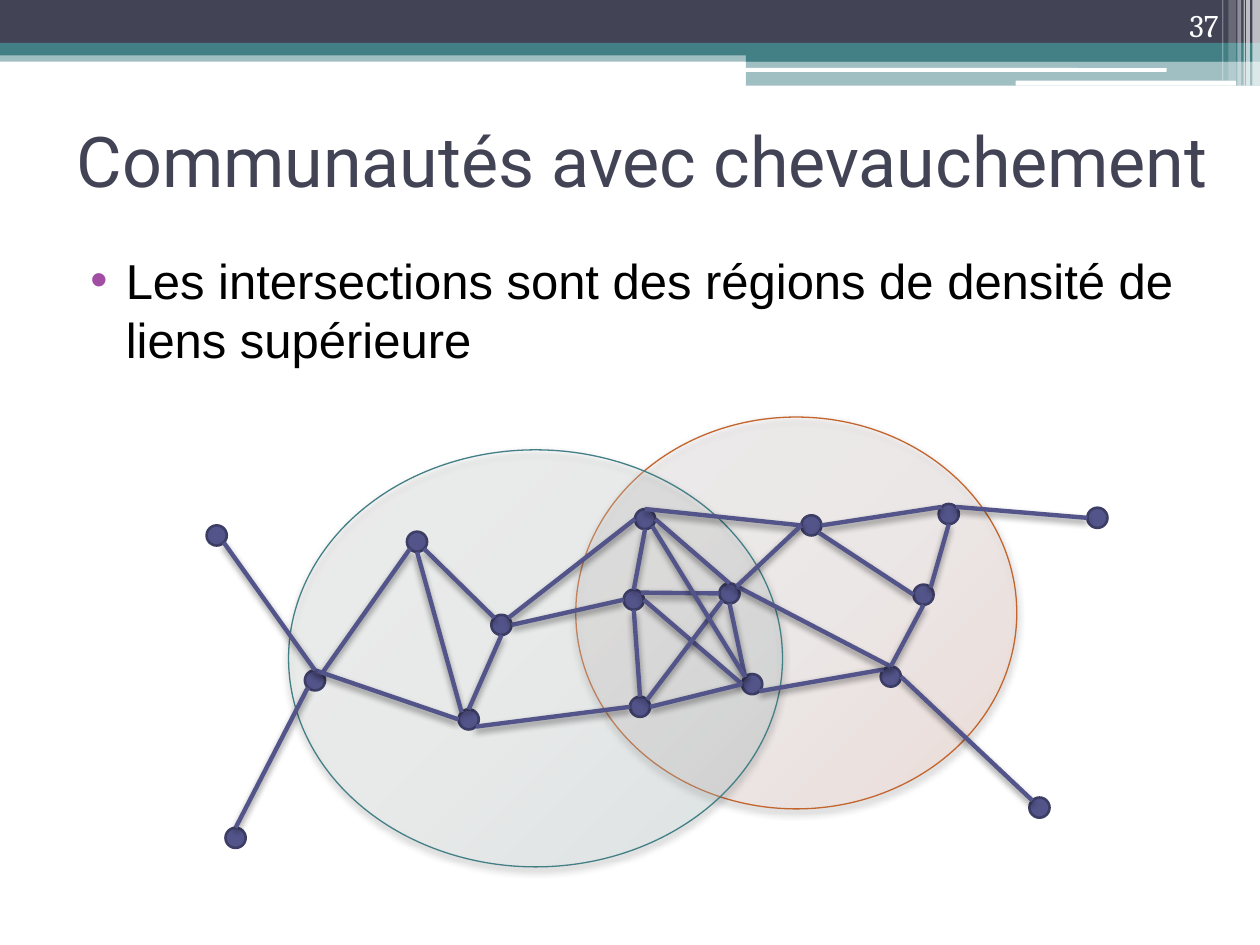
from dataclasses import dataclass
from math import cos, radians, sin

from lxml import etree
from pptx import Presentation
from pptx.dml.color import RGBColor
from pptx.enum.shapes import MSO_CONNECTOR, MSO_SHAPE
from pptx.enum.text import MSO_ANCHOR, PP_ALIGN
from pptx.oxml import parse_xml
from pptx.oxml.ns import nsdecls, qn
from pptx.util import Inches, Pt

RECT, ROUND, OVAL = MSO_SHAPE.RECTANGLE, MSO_SHAPE.ROUNDED_RECTANGLE, MSO_SHAPE.OVAL
STRAIGHT = MSO_CONNECTOR.STRAIGHT
TOP, MIDDLE, BOTTOM = MSO_ANCHOR.TOP, MSO_ANCHOR.MIDDLE, MSO_ANCHOR.BOTTOM
LEFT, RIGHT = PP_ALIGN.LEFT, PP_ALIGN.RIGHT


@dataclass(frozen=True)
class Theme:
    dark: str = "424456"
    teal: str = "438086"
    orange: str = "C4652D"
    white: str = "FFFFFF"
    black: str = "000000"
    bullet: str = "A04DA3"
    node: str = "53548A"
    node_border: str = "3D3E66"
    orange_tints: tuple = ("FFFEFD", "FFEFEC", "FFBFAE")
    teal_tints: tuple = ("FEFEFE", "F0F6F6", "BFD9DD")
    title_size: int = 40
    body_size: int = 28
    number_size: int = 18


THEME = Theme()
NODE_SIZE = 0.16

# Connection sites of an ellipse, counter-clockwise from the top
SITES = ("top", "top-left", "left", "bottom-left",
         "bottom", "bottom-right", "right", "top-right")

# left, top, width, height, colour, opacity in percent
BANDS = [
    (0, 0.4, 10, 0.09, THEME.teal, 50),
    (0, 0, 10, 0.34, THEME.dark, 100),
    (0, 0.34, 10, 0.1, THEME.teal, 100),
    (5.92, 0.39, 4.08, 0.1, THEME.teal, 100),
    (5.92, 0.48, 4.08, 0.2, THEME.teal, 50),
]
WHITE_BARS = [(5.91, 0.54, 3.35, 0.03), (8.06, 0.64, 1.75, 0.04)]
# left, width, height, opacity in percent
STRIPES = [
    (9.94, 0.06, 0.68, 65), (9.89, 0.03, 0.68, 65), (9.87, 0.01, 0.68, 60),
    (9.82, 0.03, 0.68, 40), (9.75, 0.06, 0.64, 20), (9.7, 0.01, 0.64, 30),
]
NODES = {
    "A": (1.64, 4.17), "B": (2.42, 5.32), "C": (3.23, 4.22), "D": (7.45, 4),
    "E": (3.64, 5.63), "F": (5.04, 4.04), "G": (3.9, 4.88), "H": (5.71, 4.63),
    "I": (6.36, 4.09), "J": (7.25, 4.64), "K": (4.95, 4.68), "L": (8.17, 6.33),
    "M": (5.89, 5.35), "N": (5, 5.53), "O": (6.99, 5.29), "P": (1.79, 6.57),
    "Q": (8.63, 4.03),
}
EDGES = [
    ("F", "bottom", "K", "top"), ("F", "right", "H", "top"),
    ("K", "top-right", "H", "left"), ("K", "bottom", "N", "top"),
    ("H", "bottom", "M", "top-left"), ("K", "right", "M", "left"),
    ("H", "bottom-left", "N", "top-right"), ("F", "bottom-right", "M", "top-left"),
    ("N", "right", "M", "left"), ("G", "right", "K", "left"),
    ("F", "left", "G", "top-right"), ("G", "bottom", "E", "top"),
    ("E", "bottom-right", "N", "left"), ("C", "bottom-right", "G", "top-left"),
    ("C", "bottom", "E", "top-left"), ("C", "bottom-left", "B", "top-right"),
    ("E", "left", "B", "top"), ("B", "top", "A", "bottom-right"),
    ("F", "top", "I", "left"), ("M", "bottom-right", "O", "top-left"),
    ("H", "top-right", "O", "top"), ("I", "bottom-right", "J", "left"),
    ("O", "top", "J", "bottom"), ("O", "right", "L", "top-left"),
    ("D", "top-left", "I", "right"), ("D", "bottom", "J", "top-right"),
    ("I", "left", "H", "top-right"), ("B", "bottom-left", "P", "top"),
    ("D", "top-right", "Q", "left"),
]


def color(value):
    return RGBColor.from_string(value)


def add_filled(page, kind, box, fill, opacity=100):
    shape = page.shapes.add_shape(kind, *map(Inches, box))
    shape.shadow.inherit = False
    shape.line.fill.background()
    shape.fill.solid()
    shape.fill.fore_color.rgb = color(fill)
    if opacity < 100:
        tint = shape.fill._xPr.find(".//" + qn("a:srgbClr"))
        etree.SubElement(tint, qn("a:alpha"), val=str(opacity * 1000))
    return shape


def add_shadow(element, blur, opacity):
    """Drop a black shadow two points straight down."""
    element._element.spPr.append(parse_xml(
        f'<a:effectLst {nsdecls("a")}><a:outerShdw blurRad="{Pt(blur)}" dist="{Pt(2)}" '
        f'dir="5400000" rotWithShape="0"><a:srgbClr val="{THEME.black}">'
        f'<a:alpha val="{opacity * 1000}"/></a:srgbClr></a:outerShdw></a:effectLst>'))


def add_community(page, box, tints, border):
    """Add a translucent ellipse with a diagonal gradient."""
    shape = page.shapes.add_shape(OVAL, *map(Inches, box))
    stops = "".join(
        f'<a:gs pos="{place * 1000}"><a:srgbClr val="{tint}">'
        f'<a:alpha val="25000"/></a:srgbClr></a:gs>'
        for place, tint in zip((0, 55, 100), tints))
    shape._element.spPr.append(parse_xml(
        f'<a:gradFill {nsdecls("a")} rotWithShape="1"><a:gsLst>{stops}</a:gsLst>'
        '<a:lin ang="2700000" scaled="0"/></a:gradFill>'))
    shape.line.color.rgb = color(border)
    shape.line.width = Pt(0.75)
    add_shadow(shape, 4.1, 40)


def add_node(page, place):
    node = add_filled(page, OVAL, (*place, NODE_SIZE, NODE_SIZE), THEME.node)
    node.line.color.rgb = color(THEME.node_border)
    node.line.width = Pt(1.5)
    return node


def site_point(name, site):
    angle = radians(45 * SITES.index(site))
    radius = NODE_SIZE / 2
    left, top = NODES[name]
    return Inches(left + radius - radius * sin(angle)), Inches(top + radius - radius * cos(angle))


def add_edge(page, nodes, start, start_site, end, end_site):
    edge = page.shapes.add_connector(
        STRAIGHT, *site_point(start, start_site), *site_point(end, end_site))
    edge.line.color.rgb = color(THEME.node)
    edge.line.width = Pt(2.5)
    add_shadow(edge, 4, 45)
    joints = edge._element.find(".//" + qn("p:cNvCxnSpPr"))
    for tag, name, site in (("a:stCxn", start, start_site), ("a:endCxn", end, end_site)):
        etree.SubElement(joints, qn(tag), id=str(nodes[name].shape_id),
                         idx=str(SITES.index(site)))


def add_text(page, box, text, font, size, fill, anchor=TOP, align=LEFT):
    frame = page.shapes.add_textbox(*map(Inches, box)).text_frame
    frame.word_wrap = True
    frame.vertical_anchor = anchor
    frame.text = text
    para = frame.paragraphs[0]
    para.alignment = align
    span = para.runs[0]
    span.font.name = font
    span.font.size = Pt(size)
    span.font.color.rgb = color(fill)
    return para


def add_bullet(para):
    para.space_before = Pt(3)
    properties = para._p.get_or_add_pPr()
    properties.set("marL", str(Inches(0.4)))
    properties.set("indent", str(Inches(-0.28)))
    tint = etree.SubElement(properties, qn("a:buClr"))
    etree.SubElement(tint, qn("a:srgbClr"), val=THEME.bullet)
    etree.SubElement(properties, qn("a:buFont"), typeface="Arial")
    etree.SubElement(properties, qn("a:buChar"), char="•")


def add_header(page):
    for *box, fill, opacity in BANDS:
        add_filled(page, RECT, box, fill, opacity)
    for box in WHITE_BARS:
        add_filled(page, ROUND, box, THEME.white)
    for left, width, height, opacity in STRIPES:
        add_filled(page, RECT, (left, 0, width, height), THEME.white, opacity)


def main():
    deck = Presentation()
    deck.slide_width, deck.slide_height = Inches(10), Inches(7.5)
    page = deck.slides.add_slide(deck.slide_layouts[6])
    add_header(page)
    add_community(page, (4.57, 3.31, 3.5, 3.11), THEME.orange_tints, THEME.orange)
    add_community(page, (2.29, 3.57, 3.92, 3.31), THEME.teal_tints, THEME.teal)
    add_text(page, (0.51, 0.68, 9.21, 1.17), "Communautés avec chevauchement",
             "Roboto", THEME.title_size, THEME.dark, MIDDLE)
    add_bullet(add_text(
        page, (0.5, 1.94, 9, 5.25),
        "Les intersections sont des régions de densité de liens supérieure",
        "Arial", THEME.body_size, THEME.black))
    add_text(page, (8.94, 0, 0.83, 0.4), "37", "Cambria", THEME.number_size,
             THEME.white, BOTTOM, RIGHT)
    nodes = {name: add_node(page, place) for name, place in NODES.items()}
    for edge in EDGES:
        add_edge(page, nodes, *edge)
    deck.save("out.pptx")


if __name__ == "__main__":
    main()
